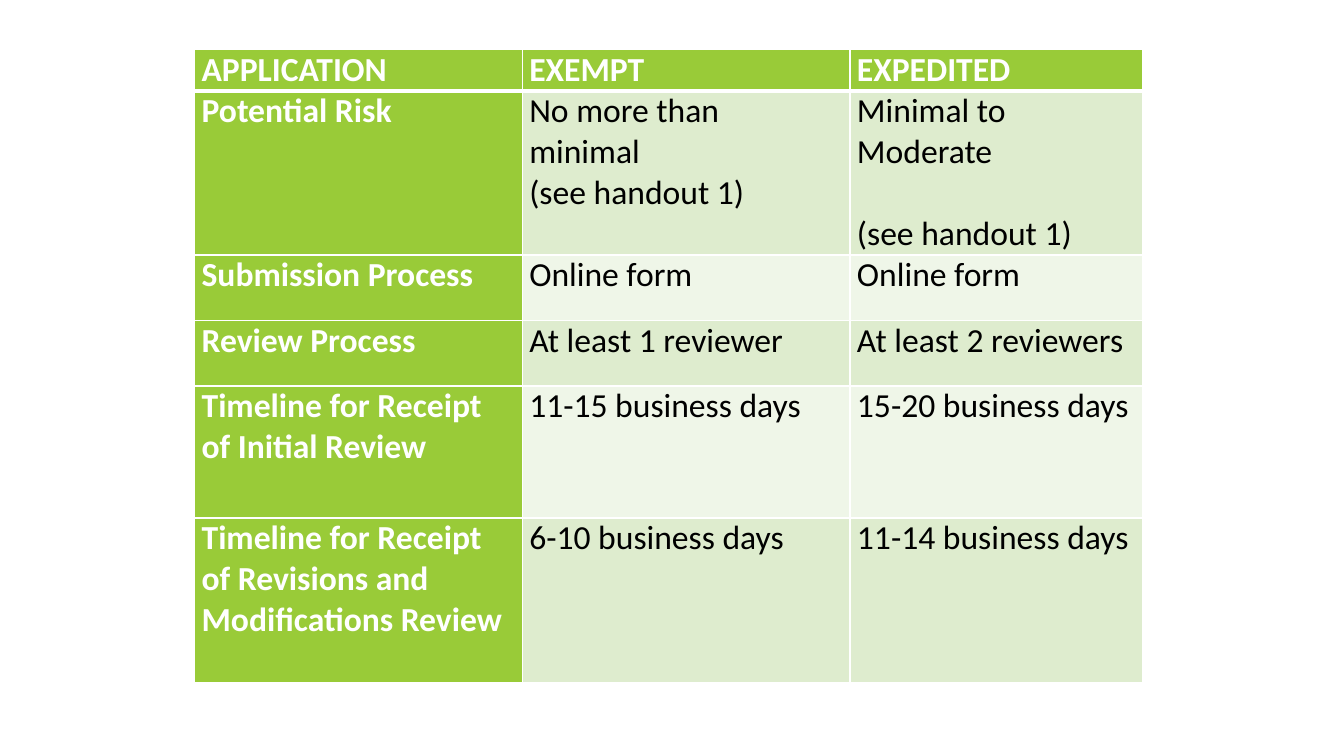
from lxml import etree
from pptx import Presentation
from pptx.dml.color import RGBColor
from pptx.oxml.ns import qn
from pptx.util import Inches, Pt

WHITE, BLACK, GREEN = "FFFFFF", "000000", "99CB38"
BANDS = ("DEECCE", "EFF6E8")
FONT, SIZE = "Calibri", 24
LINE_HEIGHT = 29.3  # points, one text line at SIZE

COLUMNS = (3.25, 3.25, 2.9)
ROWS = (0.41, 1.63, 0.65, 0.65, 1.31, 1.63)
REVIEW_TYPES = (
    ("APPLICATION", "EXEMPT", "EXPEDITED"),
    ("Potential Risk", "No more than minimal\n(see handout 1)",
     "Minimal to Moderate\n(see handout 1)"),
    ("Submission Process", "Online form", "Online form"),
    ("Review Process", "At least 1 reviewer", "At least 2 reviewers"),
    ("Timeline for Receipt of Initial Review",
     "11-15 business days", "15-20 business days"),
    ("Timeline for Receipt of Revisions and Modifications Review",
     "6-10 business days", "11-14 business days"),
)


def color(value):
    return RGBColor.from_string(value)


def set_borders(cell, widths):
    """Draw white borders; widths maps each side to points."""
    properties = cell._tc.get_or_add_tcPr()
    for index, (side, width) in enumerate(widths.items()):
        line = etree.Element(qn(f"a:ln{side}"), w=str(Pt(width)))
        fill = etree.SubElement(line, qn("a:solidFill"))
        etree.SubElement(fill, qn("a:srgbClr"), val=WHITE)
        properties.insert(index, line)


def style_cell(cell, text, row, column):
    heading = row == 0 or column == 0
    cell.margin_left = cell.margin_right = Inches(0.07)
    cell.margin_top = cell.margin_bottom = 0
    cell.fill.solid()
    cell.fill.fore_color.rgb = color(GREEN if heading else BANDS[(row - 1) % 2])
    cell.text_frame.text = text
    for para in cell.text_frame.paragraphs:
        for span in para.runs:
            span.font.name = FONT
            span.font.size = Pt(SIZE)
            span.font.bold = heading
            span.font.color.rgb = color(WHITE if heading else BLACK)
    # A thicker rule separates the header from the body
    set_borders(cell, {"L": 1, "R": 1, "T": 3 if row == 1 else 1,
                       "B": 3 if row == 0 else 1})


def add_review_table(page, left, top):
    frame = page.shapes.add_table(
        len(ROWS), len(COLUMNS), Inches(left), Inches(top),
        Inches(sum(COLUMNS)), Inches(sum(ROWS)))
    table = frame.table
    for column, width in zip(table.columns, COLUMNS):
        column.width = Inches(width)
    for row, height in zip(table.rows, ROWS):
        row.height = Inches(height)
    for row, texts in enumerate(REVIEW_TYPES):
        for column, text in enumerate(texts):
            style_cell(table.cell(row, column), text, row, column)
    # The exempt risk breaks before its last word
    table.cell(1, 1).margin_right = Inches(0.3)
    # The expedited risk leaves one line open above its handout note
    handout_note = table.cell(1, 2).text_frame.paragraphs[1]
    handout_note.space_before = Pt(LINE_HEIGHT)


def main():
    deck = Presentation()
    deck.slide_width, deck.slide_height = Inches(13.33), Inches(7.5)
    page = deck.slides.add_slide(deck.slide_layouts[6])
    add_review_table(page, 1.93, 0.49)
    deck.save("out.pptx")


if __name__ == "__main__":
    main()
